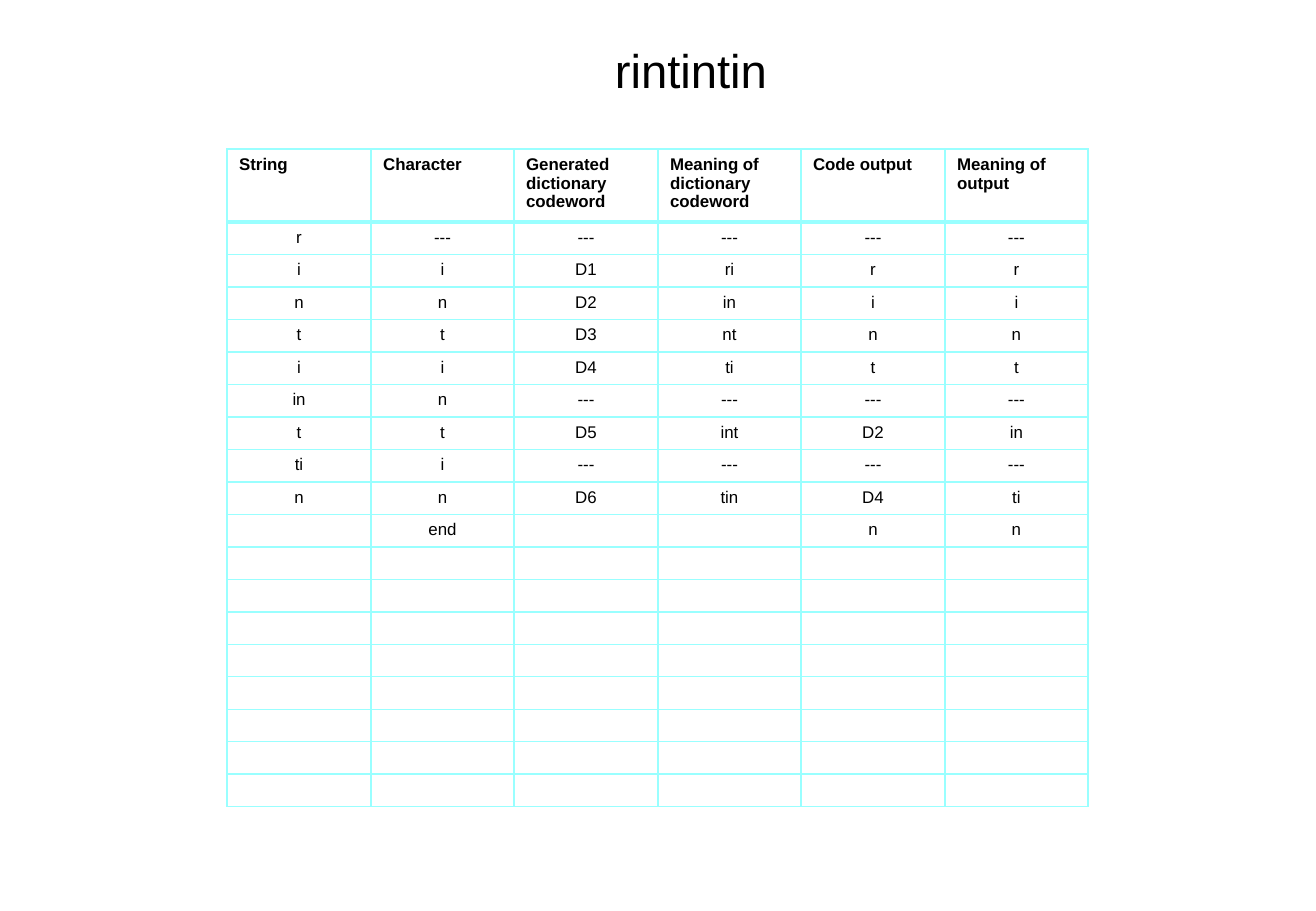
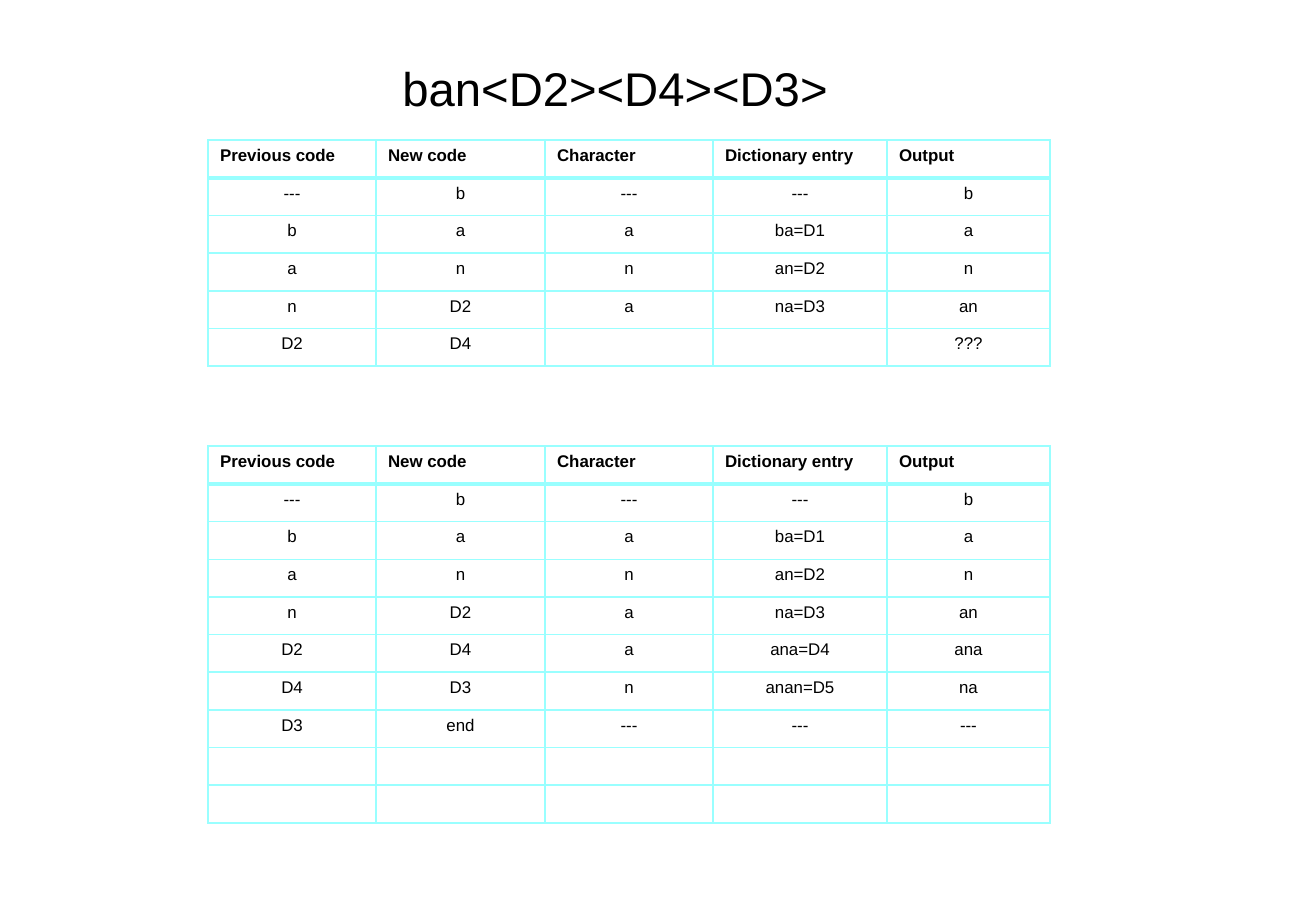
"""Build two slides of dictionary compression tables."""
from lxml.etree import SubElement
from pptx import Presentation
from pptx.dml.color import RGBColor
from pptx.enum.text import MSO_AUTO_SIZE, PP_ALIGN
from pptx.oxml.ns import qn
from pptx.util import Emu, Pt

PIXEL = 7526
COLORS = {"text": "000000", "cell": "FFFFFF", "border": "99FFFF"}
FONT = "Arial"
TITLE_SIZE, TABLE_SIZE = 28, 10
TITLE_WIDTH, TITLE_HEIGHT = 736, 69
THIN, THICK = 1, 3

NONE = "---"
ENCODING_HEADER = ("String", "Character", "Generated dictionary codeword",
                   "Meaning of dictionary codeword", "Code output", "Meaning of output")
ENCODING_ROWS = [
    ("r", NONE, NONE, NONE, NONE, NONE),
    ("i", "i", "D1", "ri", "r", "r"),
    ("n", "n", "D2", "in", "i", "i"),
    ("t", "t", "D3", "nt", "n", "n"),
    ("i", "i", "D4", "ti", "t", "t"),
    ("in", "n", NONE, NONE, NONE, NONE),
    ("t", "t", "D5", "int", "D2", "in"),
    ("ti", "i", NONE, NONE, NONE, NONE),
    ("n", "n", "D6", "tin", "D4", "ti"),
    ("", "end", "", "", "n", "n"),
]
DECODING_HEADER = ("Previous code", "New code", "Character", "Dictionary entry", "Output")
DECODING_START = [
    (NONE, "b", NONE, NONE, "b"),
    ("b", "a", "a", "ba=D1", "a"),
    ("a", "n", "n", "an=D2", "n"),
    ("n", "D2", "a", "na=D3", "an"),
]
DECODING_PUZZLE = DECODING_START + [("D2", "D4", "", "", "???")]
DECODING_SOLUTION = DECODING_START + [
    ("D2", "D4", "a", "ana=D4", "ana"),
    ("D4", "D3", "n", "anan=D5", "na"),
    ("D3", "end", NONE, NONE, NONE),
]
ENCODING_WIDTHS = [144, 143] * 3
DECODING_WIDTHS = [168, 169, 168, 174, 163]

SLIDES = [
    {"title": "rintintin", "title_at": (323, 35), "tables": [
        {"at": (227, 149), "widths": ENCODING_WIDTHS, "height": 627, "header_height": 69,
         "header": ENCODING_HEADER, "rows": ENCODING_ROWS, "spare_rows": 8},
    ]},
    {"title": "ban<D2><D4><D3>", "title_at": (247, 53), "tables": [
        {"at": (208, 140), "widths": DECODING_WIDTHS, "height": 226, "header_height": 38,
         "header": DECODING_HEADER, "rows": DECODING_PUZZLE, "spare_rows": 0},
        {"at": (208, 446), "widths": DECODING_WIDTHS, "height": 377, "header_height": 38,
         "header": DECODING_HEADER, "rows": DECODING_SOLUTION, "spare_rows": 2},
    ]},
]


def px(length):
    """Convert pixels to EMU."""
    return Emu(round(length * PIXEL))


def write_text(frame, text, size, bold=False, align=PP_ALIGN.CENTER):
    """Write one formatted paragraph, keeping the size when it is empty."""
    paragraph = frame.paragraphs[0]
    paragraph.alignment = align
    if not text:
        SubElement(paragraph._p, qn("a:endParaRPr"), sz=str(size * 100))
        return
    run = paragraph.add_run()
    run.text = text
    run.font.name = FONT
    run.font.size = Pt(size)
    run.font.bold = bold
    run.font.color.rgb = RGBColor.from_string(COLORS["text"])


def style_cell(cell, top, bottom):
    """Give a cell its four borders and its fill."""
    properties = cell._tc.get_or_add_tcPr()
    for side, width in (("L", THIN), ("R", THIN), ("T", top), ("B", bottom)):
        line = SubElement(properties, qn(f"a:ln{side}"), w=str(Pt(width)))
        fill = SubElement(line, qn("a:solidFill"))
        SubElement(fill, qn("a:srgbClr"), val=COLORS["border"])
    cell.fill.solid()
    cell.fill.fore_color.rgb = RGBColor.from_string(COLORS["cell"])


def add_title(slide, text, left, top):
    """Add the slide title."""
    box = slide.shapes.add_textbox(px(left), px(top), px(TITLE_WIDTH), px(TITLE_HEIGHT))
    box.text_frame.word_wrap = True
    box.text_frame.auto_size = MSO_AUTO_SIZE.SHAPE_TO_FIT_TEXT
    write_text(box.text_frame, text, TITLE_SIZE)


def add_code_table(slide, at, widths, height, header_height, header, rows, spare_rows):
    """Add a table with a bold header, its rows and spare empty rows."""
    content = [header, *rows] + [[""] * len(header)] * spare_rows
    left, top = at
    shape = slide.shapes.add_table(len(content), len(header), px(left), px(top),
                                   px(sum(widths)), px(height))
    table = shape.table
    table.first_row = table.horz_banding = False
    for column, width in zip(table.columns, widths):
        column.width = px(width)
    row_height = (height - header_height) / (len(content) - 1)
    for index, values in enumerate(content):
        is_header = index == 0
        table.rows[index].height = px(header_height if is_header else row_height)
        for column_index, value in enumerate(values):
            cell = table.cell(index, column_index)
            style_cell(cell, top=THICK if index == 1 else THIN,
                       bottom=THICK if is_header else THIN)
            write_text(cell.text_frame, value, TABLE_SIZE, bold=is_header,
                       align=PP_ALIGN.LEFT if is_header else PP_ALIGN.CENTER)


def main():
    """Build and save the presentation."""
    presentation = Presentation()
    presentation.slide_width, presentation.slide_height = px(1316), px(911)
    for content in SLIDES:
        slide = presentation.slides.add_slide(presentation.slide_layouts[6])
        add_title(slide, content["title"], *content["title_at"])
        for table in content["tables"]:
            add_code_table(slide, **table)
    presentation.save("out.pptx")


if __name__ == "__main__":
    main()
